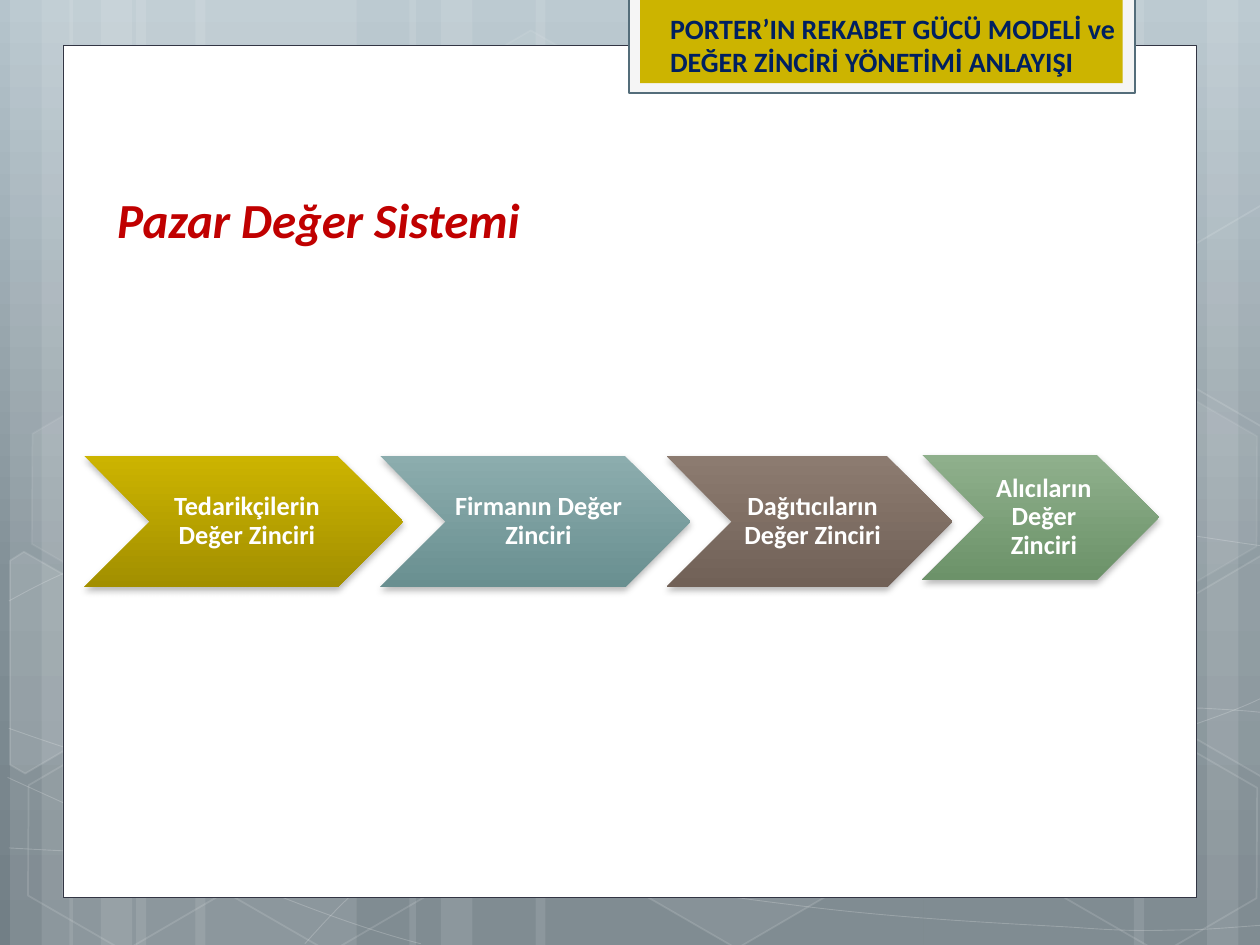
from copy import deepcopy
from dataclasses import dataclass

from lxml import etree
from pptx import Presentation
from pptx import util as u
from pptx.dml.color import RGBColor
from pptx.enum import shapes, text
from pptx.oxml.ns import qn

COLUMNS, ROWS = 10, 7.5


@dataclass(frozen=True)
class Theme:
    font: str = "Calibri"
    white: str = "FFFFFF"
    border: str = "323543"
    plaque: str = "F5F5F5"
    plaque_edge: str = "546D7A"
    gold: str = "CCB400"
    navy: str = "002060"
    red: str = "C00000"
    shadow: str = "000000"
    backdrop: tuple = ((0, "B5C4CC"), (0.62, "829097"), (1, "727F86"))
    title_size: int = 28
    header_size: int = 16
    step_size: int = 15


@dataclass(frozen=True)
class Box:
    left: float
    top: float
    width: float
    height: float

    def cell(self, column, row, columns, rows):
        return Box(self.left + column, self.top + row, columns, rows)

    def emu(self):
        return [u.Inches(side) for side in (self.left, self.top, self.width, self.height)]


THEME = Theme()
HEXAGONS = (
    (3.34, 0.36, 4, 8), (4.97, 5.89, 6, 12), (0.11, 5.91, 0, 12),
    (0.14, 3.12, 7, 8), (1.74, 5.92, 0, 12), (7.53, 4.53, 10, 12),
    (8.34, 5.93, 0, 12), (8.34, 3.14, 7, 8),
)
CUT_HEXAGONS = (
    (10, ((0.08, 4.45), (0.19, 4.38), (0.96, 4.82), (0.95, 5.7), (0.2, 6.14), (0.08, 6.07))),
    (4, ((9.26, 4.85), (10.01, 4.41), (10.09, 4.46), (10.09, 6.13), (10.02, 6.17), (9.26, 5.73))),
    (0, ((9.26, 2.07), (10.01, 1.63), (10.1, 1.68), (10.09, 3.35), (10.02, 3.39), (9.26, 2.95))),
)
CURVES = (
    ((0.07, 6.73), (0.61, 6.76), (1.15, 6.79), (1.9, 6.78), (2.65, 6.77), (3.58, 6.75),
     (4.58, 6.65), (5.58, 6.55), (7, 6.36), (7.92, 6.17), (8.83, 5.98), (9.77, 5.68), (10.07, 5.51)),
    ((0.07, 4.77), (0.36, 4.61), (0.65, 4.46), (1.21, 4.31), (1.78, 4.16), (2.59, 3.94),
     (3.47, 3.87), (4.36, 3.8), (5.44, 3.79), (6.54, 3.87), (7.64, 3.95), (9.47, 4.26), (10.07, 4.34)),
    ((0.06, 6.17), (1.27, 6.72), (2.47, 7.27), (3.34, 7.49)),
    ((0.07, 5.78), (0.38, 5.89), (0.7, 6), (1.28, 6.16), (1.86, 6.31), (2.73, 6.56),
     (3.57, 6.73), (4.4, 6.9), (5.45, 7.08), (6.28, 7.18), (7.11, 7.29), (8, 7.33),
     (8.53, 7.36), (9.05, 7.4), (9.19, 7.38), (9.45, 7.38), (9.71, 7.37), (9.89, 7.35), (10.07, 7.34)),
    ((2.42, 7.49), (2.6, 7.29), (2.78, 7.09), (3.02, 6.91), (3.26, 6.73), (3.6, 6.53),
     (3.88, 6.39), (4.16, 6.25), (4.33, 6.19), (4.7, 6.09), (5.06, 5.99), (5.73, 5.85),
     (6.08, 5.78), (6.44, 5.71), (6.49, 5.71), (6.8, 5.69), (7.11, 5.66), (7.6, 5.63),
     (7.94, 5.62), (8.29, 5.61), (8.86, 5.62), (8.86, 5.62), (9.08, 5.62), (9.31, 5.62),
     (9.53, 5.62), (9.71, 5.63), (9.88, 5.64), (9.97, 5.65), (10.06, 5.66), (10.03, 5.65), (10.06, 5.66)),
)
STEPS = (
    ("Tedarikçilerin Değer Zinciri", 0, 0.01, 2.53, 1.04, ("CCB400", "A28F00")),
    ("Firmanın Değer Zinciri", 2.35, 0.01, 2.46, 1.04, ("8CADAE", "698F90")),
    ("Dağıtıcıların Değer Zinciri", 4.62, 0.01, 2.27, 1.04, ("8C7B70", "716157")),
    ("Alıcıların Değer Zinciri", 6.65, 0, 1.88, 0.99, ("8FB08C", "6C9269")),
)


def paint(fill, color, percent=100):
    if not percent:
        fill.background()
        return
    fill.solid()
    fill.fore_color.rgb = RGBColor.from_string(color)
    if percent < 100:
        node = fill._xPr.find(qn("a:solidFill")).find(qn("a:srgbClr"))
        etree.SubElement(node, qn("a:alpha"), val=str(percent * 1000))


def paint_gradient(fill, owner, stops):
    fill.gradient()
    fill.gradient_angle = 270
    stop_list = next(owner.iter(qn("a:gsLst")))
    while len(stop_list) < len(stops):
        stop_list.append(deepcopy(stop_list[-1]))
    for stop, (position, color) in zip(fill.gradient_stops, stops):
        stop.position = position
        stop.color.rgb = RGBColor.from_string(color)


def style(shape, fill, line=None, width=0.5, fill_percent=100, line_percent=100):
    shape.shadow.inherit = False
    paint(shape.fill, fill, fill_percent)
    paint(shape.line.fill, line, line_percent if line else 0)
    if line:
        shape.line.width = u.Pt(width)


def add_panel(page, box, *look, kind=shapes.MSO_SHAPE.RECTANGLE, **options):
    shape = page.shapes.add_shape(kind, *box.emu())
    style(shape, *look, **options)
    return shape


def add_outline(page, box, points, close):
    spots = [(u.Inches(box.left + x), u.Inches(box.top + y)) for x, y in points]
    builder = page.shapes.build_freeform(*spots[0], scale=1.0)
    builder.add_line_segments(spots[1:], close=close)
    return builder.convert_to_shape()


def add_curve(page, box, points):
    curve = add_outline(page, box, points, False)
    segments = list(curve.element.iter(qn("a:lnTo")))
    outline = segments[0].getparent()
    for start in range(0, len(segments), 3):
        bend = etree.SubElement(outline, qn("a:cubicBezTo"))
        for segment in segments[start:start + 3]:
            bend.append(segment[0])
            outline.remove(segment)
    return curve


def write(frame, words, size, color, italic=False, align=text.PP_ALIGN.LEFT):
    frame.word_wrap = True
    frame.auto_size = text.MSO_AUTO_SIZE.NONE
    para = frame.paragraphs[0]
    para.text = words
    para.alignment = align
    para.font.name = THEME.font
    para.font.size = u.Pt(size)
    para.font.bold = True
    para.font.italic = italic
    para.font.color.rgb = RGBColor.from_string(color)
    return para


def build_backdrop(page, box):
    stripes = []
    for start, wide in ((0.08, 1.75), (0.55, 1.75), (3.25, 3.08)):
        stripes += [(start + 1, wide), (start, 0.5), (start + 0.25, 0.83)]
    stripes += [(10.08 - offset - wide, wide)
                for offset, wide in ((1, 1.75), (0, 0.5), (0.25, 0.83))]
    for left, wide in stripes:
        add_panel(page, box.cell(left, 0, wide, box.height), THEME.white, fill_percent=10)
    for points in CURVES:
        style(add_curve(page, box, points), THEME.white, THEME.white,
              fill_percent=0, line_percent=20)
    for left, top, fill_percent, line_percent in HEXAGONS:
        hexagon = add_panel(page, box.cell(left, top, 1.75, 1.52), THEME.white, THEME.white, 1,
                            kind=shapes.MSO_SHAPE.HEXAGON,
                            fill_percent=fill_percent, line_percent=line_percent)
        hexagon.adjustments[0] = 0.285
        hexagon.adjustments[1] = 1.155
        hexagon.rotation = 30
    for fill_percent, points in CUT_HEXAGONS:
        style(add_outline(page, box, points, True), THEME.white, THEME.white, 1,
              fill_percent, 12)
    add_panel(page, box.cell(0.5, 0.36, 9, 6.76), THEME.white, THEME.border)


def build_plaque(page, box):
    add_panel(page, box, THEME.plaque, THEME.plaque_edge, 1.25)
    add_panel(page, box.cell(0.09, 0, 3.83, 0.68), THEME.gold)


def move_to_master(page, master):
    paint_gradient(master.background.fill, master.element, THEME.backdrop)
    drawn = [shape for shape in page.shapes if not shape.is_placeholder]
    for number, shape in enumerate(drawn, start=100):
        next(shape.element.iter(qn("p:cNvPr"))).set("id", str(number))
        master.shapes.element.append(shape.element)


def build_header(page, box):
    label = page.shapes.add_textbox(*box.emu())
    write(label.text_frame, "PORTER’IN REKABET GÜCÜ MODELİ ve DEĞER ZİNCİRİ YÖNETİMİ ANLAYIŞI",
          THEME.header_size, THEME.navy)


def build_chain(page, box):
    for words, column, row, columns, rows, colors in STEPS:
        step = add_panel(page, box.cell(column, row, columns, rows), colors[0],
                         kind=shapes.MSO_SHAPE.CHEVRON)
        paint_gradient(step.fill, step.element, tuple(enumerate(colors)))
        effects = next(step.element.iter(qn("a:effectLst")))
        shadow = etree.SubElement(effects, qn("a:outerShdw"), blurRad=str(u.Pt(4)),
                                  dist=str(u.Pt(2)), dir="5400000", rotWithShape="0")
        tone = etree.SubElement(shadow, qn("a:srgbClr"), val=THEME.shadow)
        etree.SubElement(tone, qn("a:alpha"), val="28000")
        frame = step.text_frame
        frame.margin_left = u.Inches(0.07)
        frame.margin_top = frame.margin_right = frame.margin_bottom = u.Inches(0.02)
        frame.vertical_anchor = text.MSO_ANCHOR.MIDDLE
        para = write(frame, words, THEME.step_size, THEME.white, align=text.PP_ALIGN.CENTER)
        para.line_spacing = 0.9


def build_title(page, box):
    title = page.shapes.title
    title.left, title.top, title.width, title.height = box.emu()
    title.text_frame.vertical_anchor = text.MSO_ANCHOR.TOP
    write(title.text_frame, "Pazar Değer Sistemi", THEME.title_size, THEME.red, italic=True)
    title.element.getparent().append(title.element)


def main():
    deck = Presentation()
    deck.slide_width, deck.slide_height = u.Inches(COLUMNS), u.Inches(ROWS)
    page = deck.slides.add_slide(deck.slide_layouts[5])
    sheet = Box(0, 0, COLUMNS, ROWS)
    build_backdrop(page, sheet)
    build_plaque(page, sheet.cell(4.99, -0.02, 4.02, 0.76))
    move_to_master(page, deck.slide_master)
    build_header(page, sheet.cell(5.22, 0.04, 3.8, 1.18))
    build_chain(page, sheet.cell(0.67, 3.61, 8.53, 1.05))
    build_title(page, sheet.cell(0.83, 1.45, 8.35, 0.57))
    deck.save("out.pptx")


if __name__ == "__main__":
    main()
